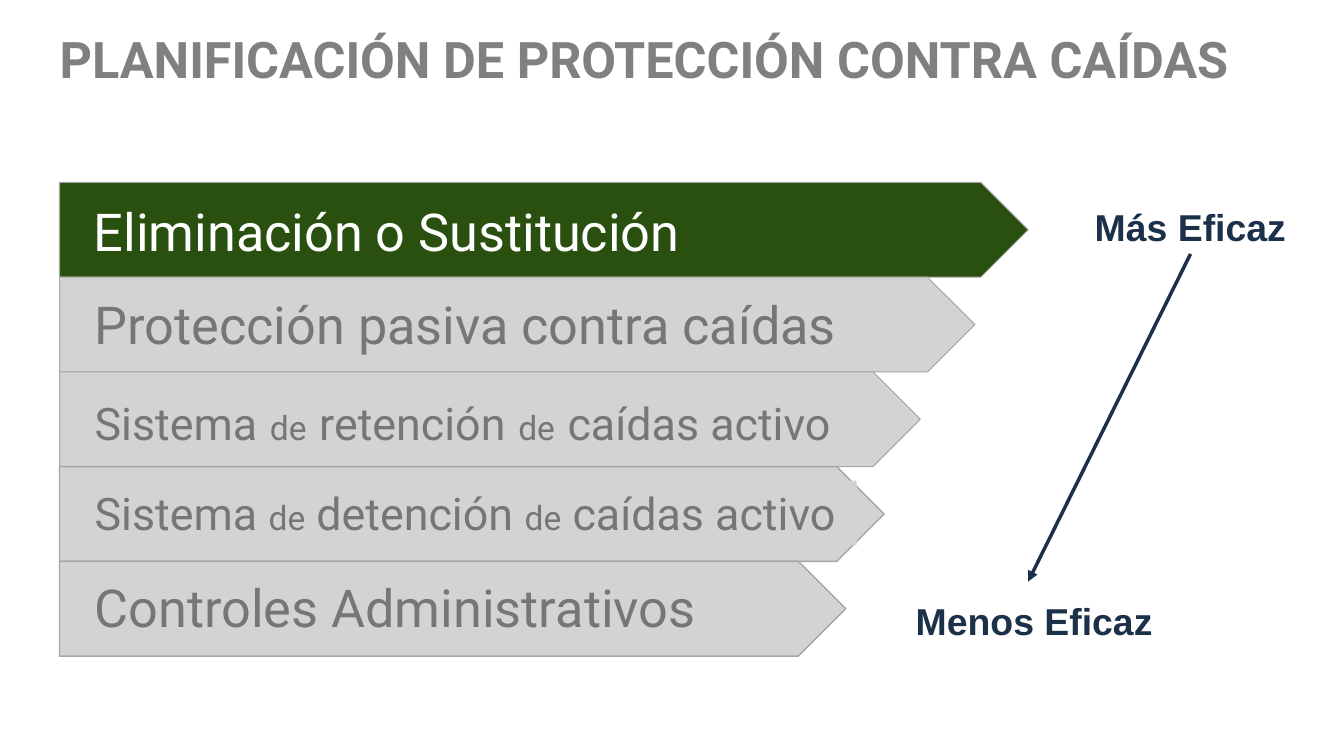
from dataclasses import dataclass

from lxml.etree import SubElement
from pptx import Presentation
from pptx.dml.color import RGBColor
from pptx.enum.shapes import MSO_CONNECTOR, MSO_SHAPE
from pptx.enum.text import MSO_ANCHOR, MSO_AUTO_SIZE, PP_ALIGN
from pptx.oxml.ns import qn
from pptx.shapes.autoshape import Shape
from pptx.shapes.connector import Connector
from pptx.slide import Slide
from pptx.util import Inches, Length, Pt

# The slide is a grid of 100 columns by 100 rows
SLIDE_WIDTH = Inches(13.333)
SLIDE_HEIGHT = Inches(7.5)
LEFT_COLUMN = 4.43
FIRST_BAR_ROW = 24.13
BAR_ROWS = 12.53


def columns(count: float) -> Length:
    return Length(round(SLIDE_WIDTH * count / 100))


def rows(count: float) -> Length:
    return Length(round(SLIDE_HEIGHT * count / 100))


@dataclass(frozen=True)
class Theme:
    heading_font: str = "Roboto"
    label_font: str = "Arial"
    heading: RGBColor = RGBColor(0x80, 0x80, 0x80)
    active: RGBColor = RGBColor(0x2A, 0x50, 0x10)
    active_text: RGBColor = RGBColor(0xFF, 0xFF, 0xFF)
    muted: RGBColor = RGBColor(0xD3, 0xD3, 0xD3)
    muted_text: RGBColor = RGBColor(0x76, 0x76, 0x76)
    outline: RGBColor = RGBColor(0xA6, 0xA6, 0xA6)
    navy: RGBColor = RGBColor(0x1B, 0x30, 0x49)
    title_size: float = 36
    bar_size: float = 37.3
    long_bar_size: float = 32
    small_size: float = 24
    gap_size: float = 36
    label_size: float = 26.7


THEME = Theme()


@dataclass(frozen=True)
class Piece:
    text: str
    size: float


@dataclass(frozen=True)
class Box:
    left: float
    top: float
    width: float
    height: float

    def place(self) -> tuple[Length, Length, Length, Length]:
        return columns(self.left), rows(self.top), columns(self.width), rows(self.height)


@dataclass(frozen=True)
class Bar:
    pieces: list[Piece]
    width: float
    text_left: float
    text_offset: float
    text_width: float
    text_height: float
    outline_width: float = 0.75
    active: bool = False
    filled_text: bool = False


GAP = Piece(" ", THEME.gap_size)
SMALL_DE = Piece("de", THEME.small_size)

BARS = [
    Bar([Piece("Eliminación o Sustitución", THEME.bar_size)],
        72.08, 6.23, 1.6, 45.53, 9.73, active=True),
    Bar([Piece("Protección pasiva contra caídas", THEME.bar_size)],
        68.1, 6.3, 1.33, 56.93, 9.73),
    Bar([Piece("Sistema", THEME.long_bar_size), GAP, SMALL_DE, GAP,
         Piece("retención", THEME.long_bar_size), GAP, SMALL_DE, GAP,
         Piece("caídas activo", THEME.long_bar_size)],
        64.05, 6.3, 1.73, 57.45, 9.47),
    Bar([Piece("Sistema ", THEME.long_bar_size), SMALL_DE,
         Piece(" detención ", THEME.long_bar_size), SMALL_DE,
         Piece(" caídas activo", THEME.long_bar_size)],
        61.35, 6.3, 1.87, 57.45, 8.53, outline_width=1, filled_text=True),
    Bar([Piece("Controles Administrativos", THEME.bar_size)],
        58.5, 6.3, 1.2, 46.28, 9.73, outline_width=1),
]


def bar_top(index: int) -> float:
    return FIRST_BAR_ROW + index * BAR_ROWS


def draw_bar(slide: Slide, bar: Bar, index: int) -> None:
    box = Box(LEFT_COLUMN, bar_top(index), bar.width, BAR_ROWS)
    shape = slide.shapes.add_shape(MSO_SHAPE.PENTAGON, *box.place())
    shape.shadow.inherit = False
    shape.fill.solid()
    shape.fill.fore_color.rgb = THEME.active if bar.active else THEME.muted
    shape.line.color.rgb = THEME.outline
    shape.line.width = Pt(bar.outline_width)


def draw_bar_text(slide: Slide, bar: Bar, index: int) -> None:
    box = Box(bar.text_left, bar_top(index) + bar.text_offset,
              bar.text_width, bar.text_height)
    shape = slide.shapes.add_textbox(*box.place())
    if bar.filled_text:
        shape.fill.solid()
        shape.fill.fore_color.rgb = THEME.muted
    frame = shape.text_frame
    frame.word_wrap = False
    frame.auto_size = MSO_AUTO_SIZE.SHAPE_TO_FIT_TEXT
    for piece in bar.pieces:
        run = frame.paragraphs[0].add_run()
        run.text = piece.text
        run.font.name = THEME.heading_font
        run.font.size = Pt(piece.size)
        run.font.color.rgb = THEME.active_text if bar.active else THEME.muted_text


def draw_bold_text(slide: Slide, text: str, box: Box, font: str, size: float,
                   color: RGBColor, alignment: PP_ALIGN, margin: float) -> Shape:
    shape = slide.shapes.add_textbox(*box.place())
    frame = shape.text_frame
    frame.word_wrap = True
    frame.vertical_anchor = MSO_ANCHOR.MIDDLE
    frame.margin_left = frame.margin_right = Inches(margin)
    frame.margin_top = frame.margin_bottom = Inches(margin / 2)
    frame.text = text
    paragraph = frame.paragraphs[0]
    paragraph.alignment = alignment
    run_font = paragraph.runs[0].font
    run_font.name = font
    run_font.size = Pt(size)
    run_font.bold = True
    run_font.color.rgb = color
    return shape


def draw_label(slide: Slide, text: str, box: Box) -> Shape:
    return draw_bold_text(slide, text, box, THEME.label_font, THEME.label_size,
                          THEME.navy, PP_ALIGN.CENTER, 0.13)


def draw_arrow(slide: Slide, start: Shape, end_column: float, end_row: float) -> Connector:
    arrow = slide.shapes.add_connector(
        MSO_CONNECTOR.STRAIGHT, start.left + start.width // 2,
        start.top + start.height, columns(end_column), rows(end_row))
    arrow.begin_connect(start, 2)
    arrow.line.color.rgb = THEME.navy
    arrow.line.width = Pt(2.5)
    SubElement(arrow.line._get_or_add_ln(), qn("a:tailEnd"), type="triangle")
    SubElement(arrow._element.spPr, qn("a:effectLst"))
    return arrow


def main() -> None:
    presentation = Presentation()
    presentation.slide_width = SLIDE_WIDTH
    presentation.slide_height = SLIDE_HEIGHT
    slide = presentation.slides.add_slide(presentation.slide_layouts[6])

    # Title
    draw_bold_text(slide, "PLANIFICACIÓN DE PROTECCIÓN CONTRA CAÍDAS",
                   Box(LEFT_COLUMN, 4.47, 95.55, 6.53), THEME.heading_font,
                   THEME.title_size, THEME.heading, PP_ALIGN.LEFT, 0)

    # Hierarchy of controls
    for index, bar in enumerate(BARS):
        draw_bar(slide, bar, index)
    for index, bar in enumerate(BARS):
        draw_bar_text(slide, bar, index)

    # Effectiveness scale
    most_effective = draw_label(slide, "Más Eficaz", Box(77.78, 26.4, 21.6, 7.2))
    draw_label(slide, "Menos Eficaz", Box(63.38, 78.53, 27.15, 7.2))
    draw_arrow(slide, most_effective, 76.5, 76.93)

    presentation.save("out.pptx")


if __name__ == "__main__":
    main()
